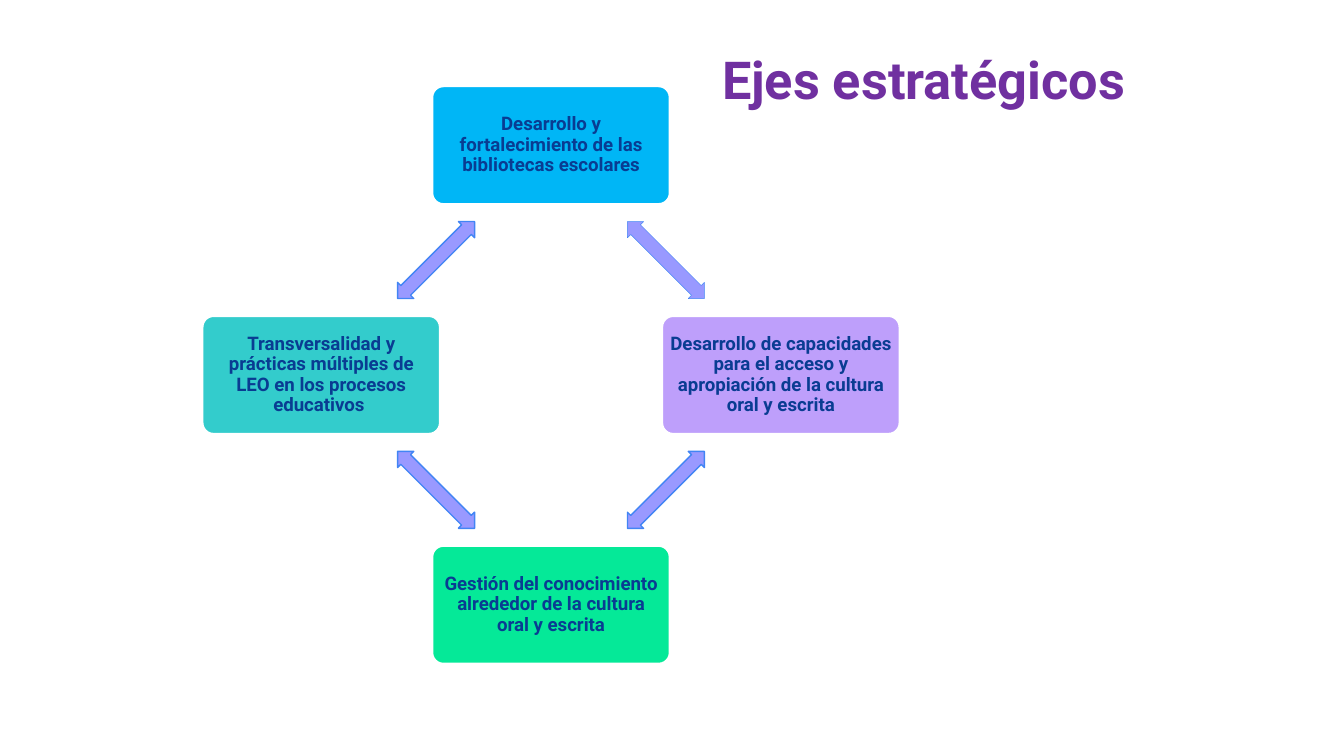
"""Build the slide of strategic axes as a ring of boxes joined by arrows."""
from dataclasses import dataclass

from pptx import Presentation
from pptx.dml.color import RGBColor as Rgb
from pptx.enum.shapes import MSO_SHAPE as Kind
from pptx.enum.text import MSO_ANCHOR as Anchor, MSO_AUTO_SIZE as Fit, PP_ALIGN as Align
from pptx.util import Inches, Pt


@dataclass(frozen=True)
class Theme:
    font: str = "Roboto"
    title: str = "7030A0"
    ink: str = "093C92"
    edge: str = "FFFFFF"
    arrow: str = "9999FF"
    rim: str = "4285F4"
    big: int = 28
    small: int = 10


THEME = Theme()
WIDE = 10
HIGH = WIDE * 9 / 16
MID_X, MID_Y, STEP = 4.1, 2.79, 1.71
BOX = (1.78, 0.89)
ARROW = (0.81, 0.17)
RING = [(0, -1), (1, 0), (0, 1), (-1, 0)]
AXES = [
    ("Desarrollo y fortalecimiento de las bibliotecas escolares", "00B6F6"),
    ("Desarrollo de capacidades para el acceso y apropiación de la cultura oral y escrita", "BE9FFB"),
    ("Gestión del conocimiento alrededor de la cultura oral y escrita", "05E998"),
    ("Transversalidad y prácticas múltiples de LEO en los procesos educativos ", "33CCCC"),
]
RIMS = [0.25, 0.75, 0.75, 0.75]


def write(frame, text, size, color, align, inset):
    frame.word_wrap = True
    frame.margin_left = frame.margin_right = Inches(inset)
    frame.margin_top = frame.margin_bottom = Inches(inset)
    para = frame.paragraphs[0]
    para.text = text
    para.alignment = align
    font = para.font
    font.name, font.size, font.bold = THEME.font, Pt(size), True
    font.color.rgb = Rgb.from_string(color)
    return para


def add_shape(slide, kind, spot, size, fill, line, width):
    (col, row), (wide, high) = spot, size
    left = MID_X + col * STEP - wide / 2
    top = MID_Y + row * STEP - high / 2
    shape = slide.shapes.add_shape(
        kind, Inches(left), Inches(top), Inches(wide), Inches(high))
    shape.shadow.inherit = False
    shape.fill.solid()
    shape.fill.fore_color.rgb = Rgb.from_string(fill)
    shape.line.color.rgb = Rgb.from_string(line)
    shape.line.width = Pt(width)
    return shape


def add_title(slide, text):
    box = slide.shapes.add_textbox(
        Inches(5.21), Inches(0.25), Inches(3.26), Inches(0.67))
    write(box.text_frame, text, THEME.big, THEME.title, Align.RIGHT, 0.1)
    box.text_frame.auto_size = Fit.SHAPE_TO_FIT_TEXT


def add_axis(slide, spot, text, fill):
    box = add_shape(slide, Kind.ROUNDED_RECTANGLE, spot, BOX, fill, THEME.edge, 2)
    box.adjustments[0] = 0.1
    box.text_frame.vertical_anchor = Anchor.MIDDLE
    para = write(box.text_frame, text, THEME.small, THEME.ink, Align.CENTER, 0.04)
    para.line_spacing = 0.9
    para.space_after = Pt(3.5)


def add_arrow(slide, start, end, turn, width):
    spot = [(a + b) / 2 for a, b in zip(start, end)]
    arrow = add_shape(
        slide, Kind.LEFT_RIGHT_ARROW, spot, ARROW, THEME.arrow, THEME.rim, width)
    arrow.adjustments[0], arrow.adjustments[1] = 0.6, 0.5
    arrow.rotation = turn


def main():
    deck = Presentation()
    deck.slide_width, deck.slide_height = Inches(WIDE), Inches(HIGH)
    slide = deck.slides.add_slide(deck.slide_layouts[6])
    add_title(slide, "Ejes estratégicos")
    for i, (text, fill) in enumerate(AXES):
        add_axis(slide, RING[i], text, fill)
        add_arrow(slide, RING[i], RING[(i + 1) % 4], 45 + 90 * i, RIMS[i])
    deck.save("out.pptx")


if __name__ == "__main__":
    main()
